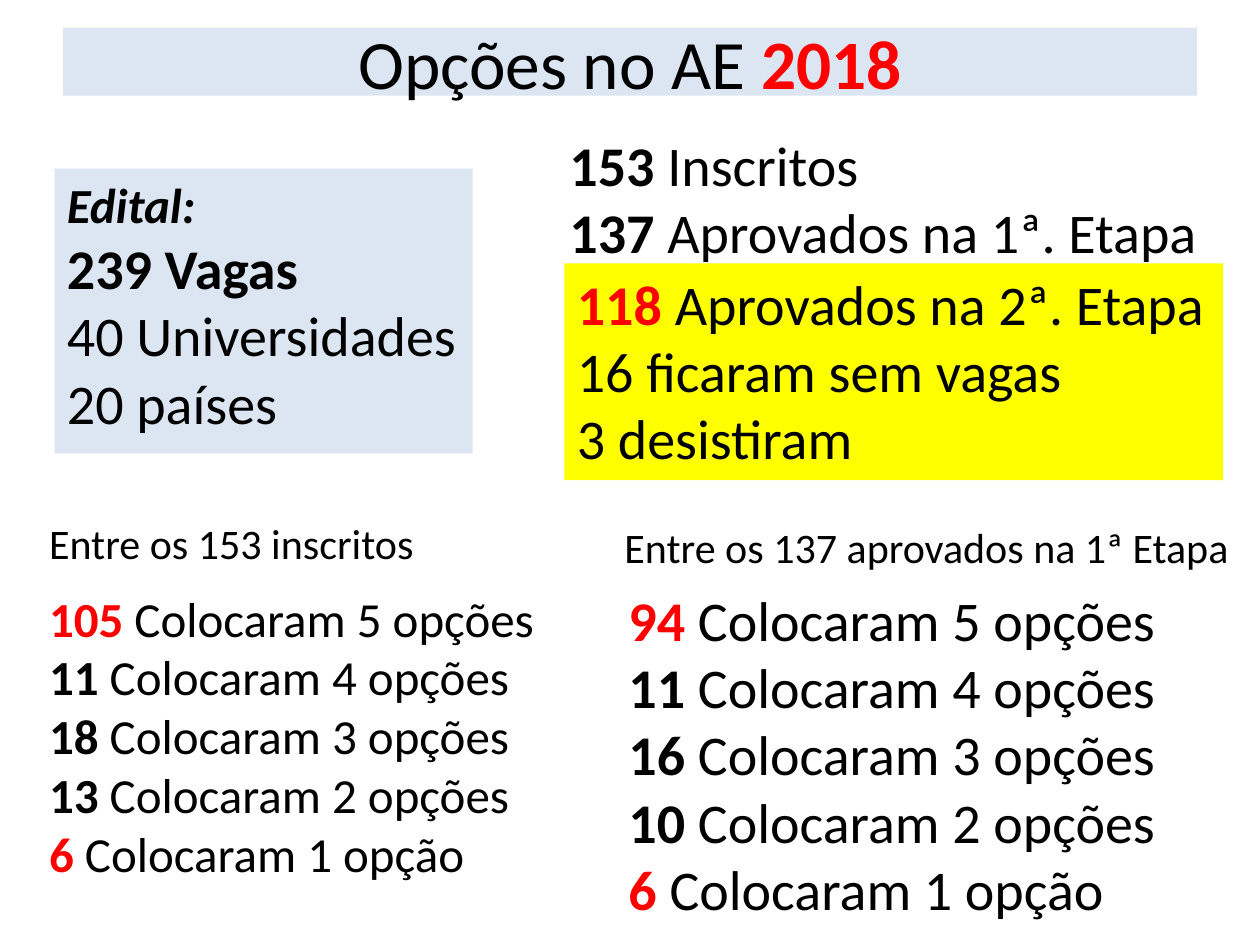
"""Build the slide with the 2018 AE option counts."""
from pptx import Presentation
from pptx.dml.color import RGBColor
from pptx.enum.text import MSO_ANCHOR, PP_ALIGN
from pptx.util import Cm, Pt

FONT = "Calibri"
BLACK, RED, BLUE, YELLOW = "000000", "FF0000", "DCE6F2", "FFFF00"

TITLE = [[("Opções no AE ", ""), ("2018", "br")]]
NOTICE = [
    [("Edital:", "bi")],
    [("239 Vagas", "b")],
    [("40 Universidades", "")],
    [("20 países", "")],
]
APPLICANTS = [
    [("153", "b"), (" Inscritos", "")],
    [("137", "b"), (" Aprovados na 1ª. Etapa", "")],
]
APPROVED = [
    [("118", "br"), (" Aprovados na 2ª. Etapa", "")],
    [("16 ficaram sem vagas", "")],
    [("3 desistiram", "")],
]
GROUPS = [
    {"heading": "Entre os 153 inscritos", "heading_box": (0.74, 10.31, 7.92, 1.27),
     "counts": [105, 11, 18, 13, 6], "box": (0.74, 11.73, 10.41, 6.25), "size": 28},
    {"heading": "Entre os 137 aprovados na 1ª Etapa", "heading_box": (12.34, 10.39, 12.8, 1.27),
     "counts": [94, 11, 16, 10, 6], "box": (12.42, 11.68, 11.23, 7.09), "size": 32},
]


def rgb(color):
    return RGBColor.from_string(color)


def add_text(shapes, box, lines, sizes, fill=None):
    sp = shapes.add_textbox(*map(Cm, box))
    if fill:
        sp.fill.solid()
        sp.fill.fore_color.rgb = rgb(fill)
    tf = sp.text_frame
    tf.word_wrap = False
    for i, (line, size) in enumerate(zip(lines, sizes)):
        p = tf.paragraphs[0] if i == 0 else tf.add_paragraph()
        for text, style in line:
            r = p.add_run()
            r.text = text
            r.font.name = FONT
            r.font.size = Pt(size)
            r.font.bold = "b" in style
            r.font.italic = "i" in style
            r.font.color.rgb = rgb(RED if "r" in style else BLACK)
    return tf


def option_lines(counts):
    lines = []
    for options, count in zip(range(5, 0, -1), counts):
        noun = "opção" if options == 1 else "opções"
        style = "br" if options in (5, 1) else "b"
        lines.append([(str(count), style), (f" Colocaram {options} {noun}", "")])
    return lines


def main():
    prs = Presentation()
    prs.slide_width, prs.slide_height = Cm(25.4), Cm(19.05)
    s = prs.slides.add_slide(prs.slide_layouts[6])

    tf = add_text(s.shapes, (1.27, 0.56, 22.86, 1.37), TITLE, [39.6], BLUE)
    tf.word_wrap = True
    tf.vertical_anchor = MSO_ANCHOR.MIDDLE
    tf.paragraphs[0].alignment = PP_ALIGN.CENTER

    add_text(s.shapes, (1.1, 3.4, 8.43, 5.74), NOTICE, [28, 32, 32, 32], BLUE)
    add_text(s.shapes, (11.23, 2.51, 13.28, 3), APPLICANTS, [32] * 2)
    add_text(s.shapes, (11.38, 5.31, 13.28, 4.37), APPROVED, [32] * 3, YELLOW)

    for group in GROUPS:
        shapes = s.shapes.add_group_shape().shapes
        add_text(shapes, group["box"], option_lines(group["counts"]), [group["size"]] * 5)
        add_text(shapes, group["heading_box"], [[(group["heading"], "")]], [24])

    prs.save("out.pptx")


if __name__ == "__main__":
    main()
